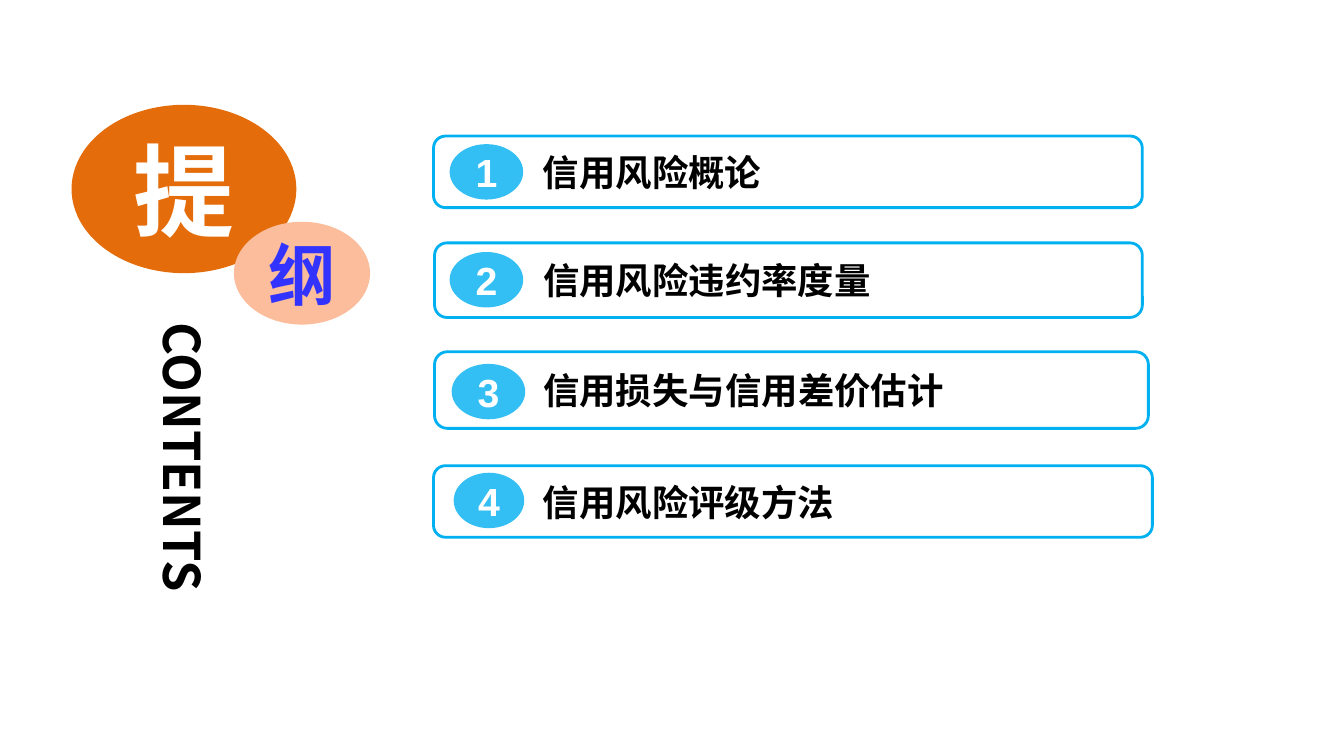
"""Build the outline slide: title ovals, a vertical label and four numbered chapters."""
from lxml.etree import SubElement
from pptx import Presentation
from pptx.dml.color import RGBColor
from pptx.enum.shapes import MSO_SHAPE
from pptx.enum.text import MSO_ANCHOR, PP_ALIGN
from pptx.oxml.ns import qn
from pptx.util import Inches, Pt

CJK = "Noto Sans CJK SC"
BLUE = "00B0F0"
CHAPTERS = [
    ("信用风险概论", (4.3, 1.35, 7.03, 0.71), (4.46, 1.43, 0.73, 0.55)),
    ("信用风险违约率度量", (4.31, 2.41, 7.02, 0.74), (4.46, 2.5, 0.73, 0.55)),
    ("信用损失与信用差价估计", (4.31, 3.49, 7.08, 0.76), (4.48, 3.61, 0.73, 0.55)),
    ("信用风险评级方法", (4.3, 4.62, 7.13, 0.71), (4.5, 4.69, 0.7, 0.55)),
]
TITLE_OVALS = [
    ("提", (0.71, 1.04, 2.23, 1.67), "E46C0A", 72, "FFFFFF"),
    ("纲", (2.32, 2.2, 1.35, 1.02), "FBBD9B", 48, "3333FF"),
]
LABEL = ("CONTENTS", (1.38, 3.2, 0.89, 3))
CHAPTER_TEXT_LEFT = 5.35


def rgb(color):
    return RGBColor.from_string(color)


def write(shape, text, size, color, font=CJK, align=PP_ALIGN.CENTER, left=0, wrap=True):
    frame = shape.text_frame
    frame.word_wrap = wrap
    frame.vertical_anchor = MSO_ANCHOR.MIDDLE
    frame.margin_left = Inches(left)
    frame.margin_top = frame.margin_right = frame.margin_bottom = 0
    paragraph = frame.paragraphs[0]
    paragraph.text = text
    paragraph.alignment = align
    paragraph.font.size = Pt(size)
    paragraph.font.bold = True
    paragraph.font.color.rgb = rgb(color)
    paragraph.font.name = font
    defaults = paragraph._p.pPr.find(qn("a:defRPr"))
    SubElement(defaults, qn("a:ea")).set("typeface", font)


def add_panel(slide, kind, box, fill, outline=None, opacity=100):
    panel = slide.shapes.add_shape(kind, *map(Inches, box))
    panel.shadow.inherit = False
    panel.fill.solid()
    panel.fill.fore_color.rgb = rgb(fill)
    if opacity < 100:
        color = panel._element.spPr.find(qn("a:solidFill"))[0]
        SubElement(color, qn("a:alpha")).set("val", str(opacity * 1000))
    if outline:
        panel.line.color.rgb = rgb(outline)
        panel.line.width = Pt(2)
    else:
        panel.line.fill.background()
    return panel


def main():
    deck = Presentation()
    deck.slide_width, deck.slide_height = Inches(13.33), Inches(7.5)
    slide = deck.slides.add_slide(deck.slide_layouts[6])

    for number, (chapter, bar_box, badge_box) in enumerate(CHAPTERS, 1):
        bar = add_panel(slide, MSO_SHAPE.ROUNDED_RECTANGLE, bar_box, "FFFFFF", BLUE)
        write(bar, chapter, 26, "000000", align=PP_ALIGN.LEFT,
              left=CHAPTER_TEXT_LEFT - bar_box[0])
        badge = add_panel(slide, MSO_SHAPE.OVAL, badge_box, BLUE, opacity=80)
        write(badge, str(number), 28, "FFFFFF", font="Arial", wrap=False)

    for character, box, fill, size, color in TITLE_OVALS:
        oval = add_panel(slide, MSO_SHAPE.OVAL, box, fill)
        write(oval, character, size, color)

    text, box = LABEL
    label = slide.shapes.add_textbox(*map(Inches, box))
    write(label, text, 36, "000000", align=PP_ALIGN.LEFT)
    label.text_frame._txBody.bodyPr.set("vert", "eaVert")

    deck.save("out.pptx")


if __name__ == "__main__":
    main()
